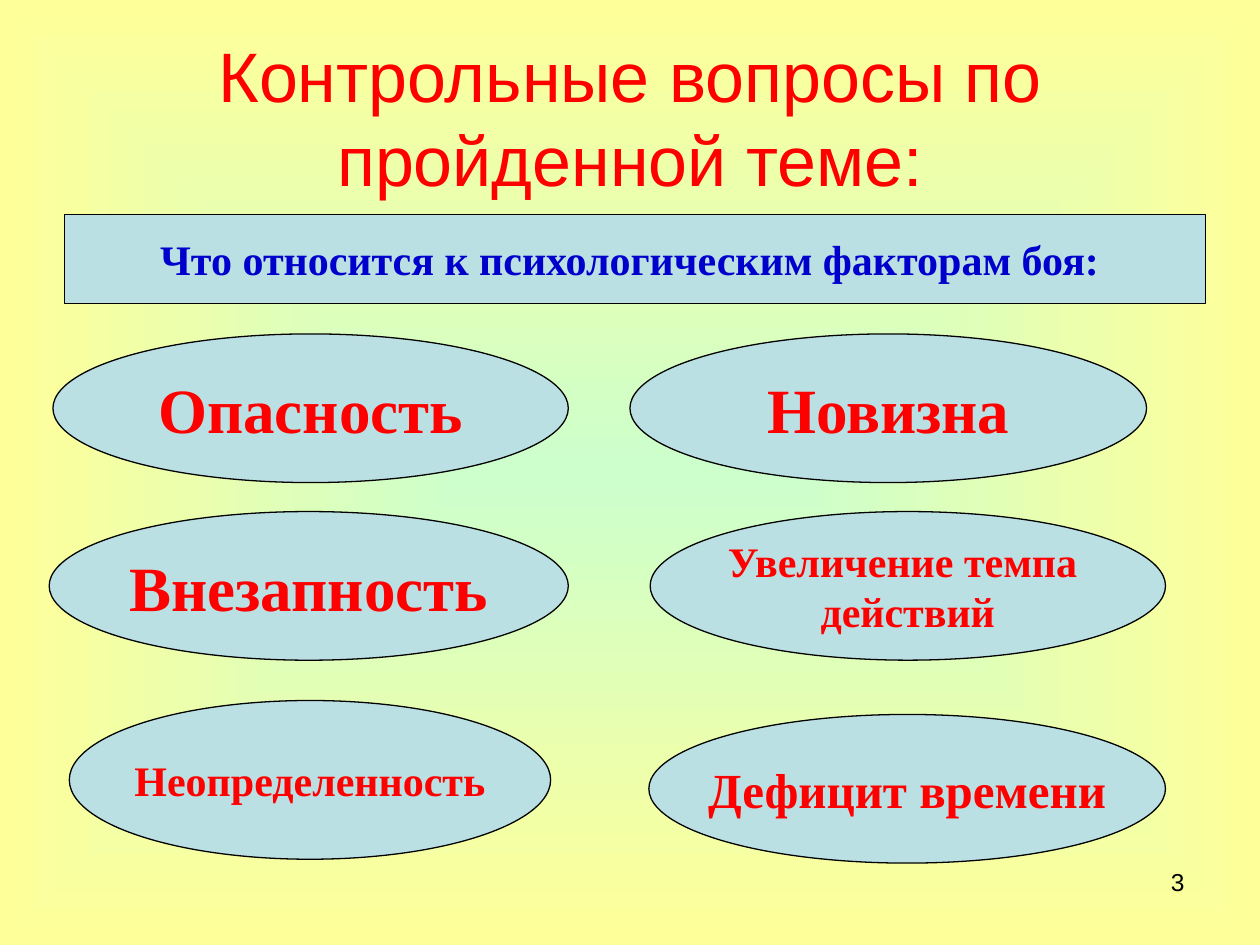
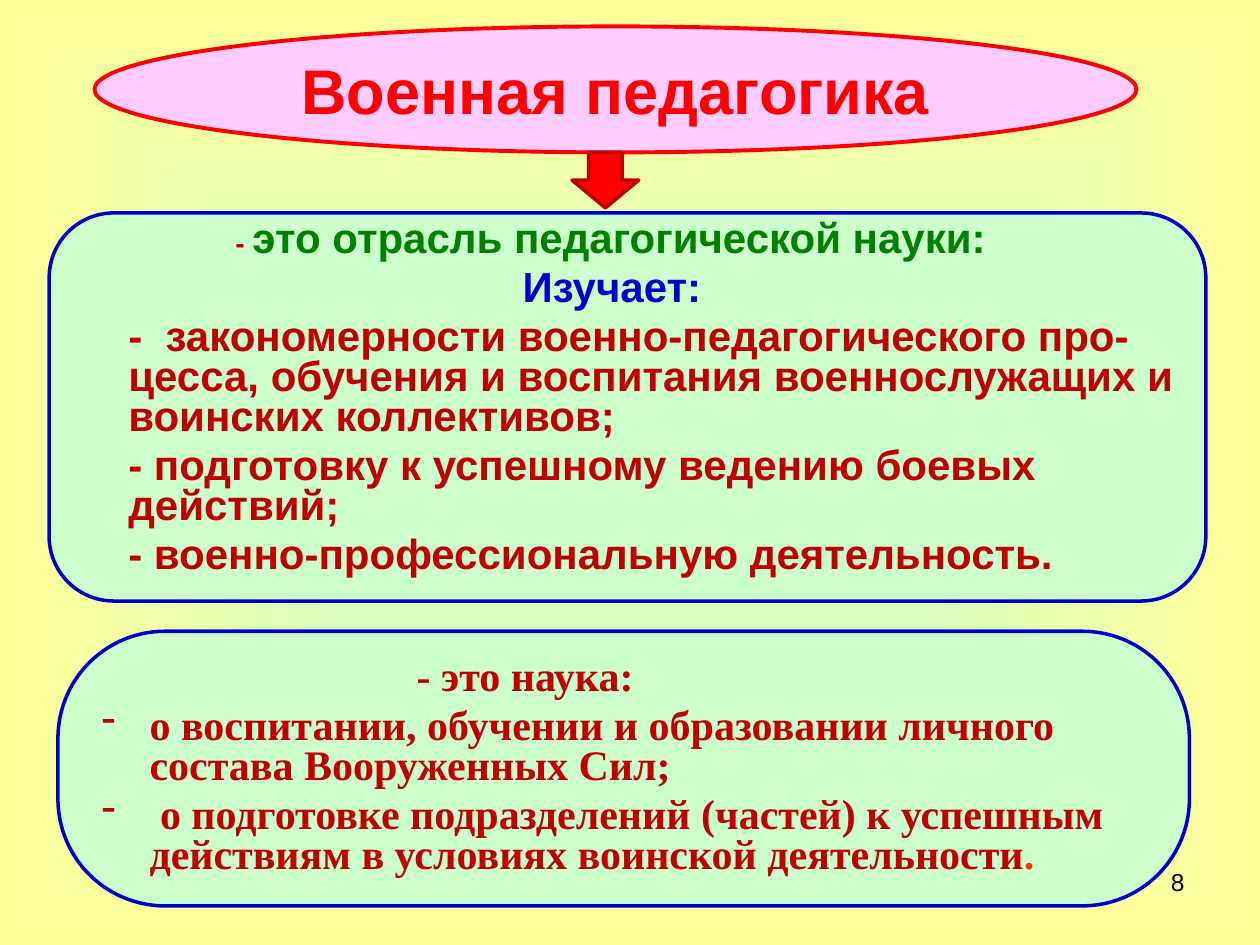
from lxml.etree import SubElement
from pptx import Presentation
from pptx.dml.color import RGBColor
from pptx.enum.shapes import MSO_SHAPE as Shape
from pptx.enum.text import MSO_ANCHOR as Anchor, PP_ALIGN as Align
from pptx.oxml.ns import qn
from pptx.util import Inches, Pt

COLORS = {
    "mint": "CCFFCC", "yellow": "FFFF99", "sky": "BBE0E3", "pink": "FFCCFF",
    "red": "FF0000", "dark_red": "C00000", "orange": "FF3300",
    "blue": "0000CC", "green": "008000", "black": "000000",
}
SANS, SERIF = "Arial", "Times New Roman"


def rgb(name):
    return RGBColor.from_string(COLORS[name])


def add_slide(presentation, number):
    slide = presentation.slides.add_slide(presentation.slide_layouts[6])
    fill = slide.background.fill
    fill.gradient()
    for stop, color in zip(fill.gradient_stops, ("mint", "yellow")):
        stop.color.rgb = rgb(color)
    gradient = next(slide.element.iter(qn("a:gradFill")))
    gradient.remove(gradient.find(qn("a:lin")))
    path = SubElement(gradient, qn("a:path"), path="shape")
    SubElement(path, qn("a:fillToRect"), l="50000", t="50000", r="50000", b="50000")
    add_label(slide, (7.17, 6.83, 2.33, 0.52), number, size=14, align=Align.RIGHT)
    return slide


def add_run(paragraph, text, size=24, font=SANS, color="black", bold=False):
    run = paragraph.add_run()
    run.text = text
    run.font.size = Pt(size)
    run.font.name = font
    run.font.bold = bold
    run.font.color.rgb = rgb(color)


def write_text(frame, text, align=Align.CENTER, **style):
    for index, line in enumerate(text.split("\n")):
        paragraph = frame.add_paragraph() if index else frame.paragraphs[0]
        paragraph.alignment = align
        add_run(paragraph, line, **style)


def add_label(slide, box, text, anchor=Anchor.TOP, **style):
    frame = slide.shapes.add_textbox(*map(Inches, box)).text_frame
    frame.word_wrap = True
    frame.vertical_anchor = anchor
    write_text(frame, text, **style)


def add_figure(slide, kind, box, fill, line, width=2, wrap=True):
    shape = slide.shapes.add_shape(kind, *map(Inches, box))
    shape.shadow.inherit = False
    shape.fill.solid()
    shape.fill.fore_color.rgb = rgb(fill)
    shape.line.color.rgb = rgb(line)
    shape.line.width = Pt(width)
    shape.text_frame.word_wrap = wrap
    shape.text_frame.vertical_anchor = Anchor.MIDDLE
    return shape


def add_factor(slide, kind, box, text, size=24, color="red"):
    shape = add_figure(slide, kind, box, "sky", "black", 0.75, wrap=False)
    write_text(shape.text_frame, text, size=size, font=SERIF, color=color, bold=True)


def add_definition(slide, box, font, items):
    shape = add_figure(slide, Shape.ROUNDED_RECTANGLE, box, "mint", "blue")
    frame = shape.text_frame
    for index, (margin, bullet, runs) in enumerate(items):
        paragraph = frame.add_paragraph() if index else frame.paragraphs[0]
        paragraph.alignment = Align.LEFT
        paragraph.line_spacing = 0.8
        paragraph.space_before = Pt(4.8)
        properties = paragraph._p.get_or_add_pPr()
        properties.set("marL", str(Inches(margin)))
        properties.set("indent", str(Inches(-0.38 if bullet else 0)))
        if bullet:
            SubElement(properties, qn("a:buChar"), char="-")
        else:
            SubElement(properties, qn("a:buNone"))
        for text, color, size in runs:
            add_run(paragraph, text, size=size, font=font, color=color, bold=True)
    return shape


def build_questions(presentation):
    slide = add_slide(presentation, "3")
    add_label(slide, (0.5, 0.3, 9, 1.25), "Контрольные вопросы по пройденной теме:",
              anchor=Anchor.MIDDLE, size=40, color="red")
    add_factor(slide, Shape.RECTANGLE, (0.51, 1.7, 9.06, 0.71),
               "Что относится к психологическим факторам боя: ", color="blue")
    factors = [
        ((0.42, 2.65, 4.09, 1.18), "Опасность", 36),
        ((0.39, 4.06, 4.12, 1.18), "Внезапность", 36),
        ((0.55, 5.56, 3.82, 1.26), "Неопределенность", 24),
        ((5, 2.65, 4.1, 1.18), "Новизна", 36),
        ((5.16, 4.06, 4.09, 1.18), "Увеличение темпа \nдействий", 24),
        ((5.15, 5.67, 4.1, 1.18), "Дефицит времени", 28),
    ]
    for box, text, size in factors:
        add_factor(slide, Shape.OVAL, box, text, size)


def build_pedagogy(presentation):
    slide = add_slide(presentation, "8")
    heading = add_figure(slide, Shape.OVAL, (0.75, 0.21, 8.27, 1), "pink", "red", 2.25)
    write_text(heading.text_frame, "Военная педагогика", size=36, color="red", bold=True)
    add_figure(slide, Shape.DOWN_ARROW, (4.54, 1.21, 0.53, 0.44), "red", "dark_red")

    subjects = [
        "-  закономерности военно-педагогического про- цесса, обучения и воспитания "
        "военнослужащих и воинских коллективов;",
        "- подготовку к успешному ведению боевых действий;",
        "- военно-профессиональную деятельность.",
    ]
    branch = add_definition(slide, (0.39, 1.69, 9.18, 3.08), SANS, [
        (1.23, False, [("- ", "dark_red", 16),
                       ("это отрасль педагогической науки:", "green", 24)]),
        (3.51, False, [("Изучает:", "blue", 24)]),
        *[(0.38, False, [(text, "dark_red", 24)]) for text in subjects],
    ])
    branch.text_frame.margin_top = 0
    branch.text_frame.margin_bottom = Inches(0.12)
    branch.text_frame.margin_right = Inches(0.05)

    science = add_definition(slide, (0.46, 5.01, 8.98, 2.18), SERIF, [
        (2.5, False, [("- это наука:", "dark_red", 24)]),
        (0.38, True, [("о воспитании, обучении и образовании личного состава "
                       "Вооруженных Сил;", "dark_red", 24)]),
        (0.38, True, [(" о подготовке подразделений (частей) к успешным действиям "
                       "в условиях воинской деятельности", "dark_red", 24),
                      (".", "orange", 24)]),
    ])
    science.adjustments[0] = 0.39


def main():
    presentation = Presentation()
    presentation.slide_width = Inches(10)
    presentation.slide_height = Inches(7.5)
    build_questions(presentation)
    build_pedagogy(presentation)
    presentation.save("out.pptx")


if __name__ == "__main__":
    main()
